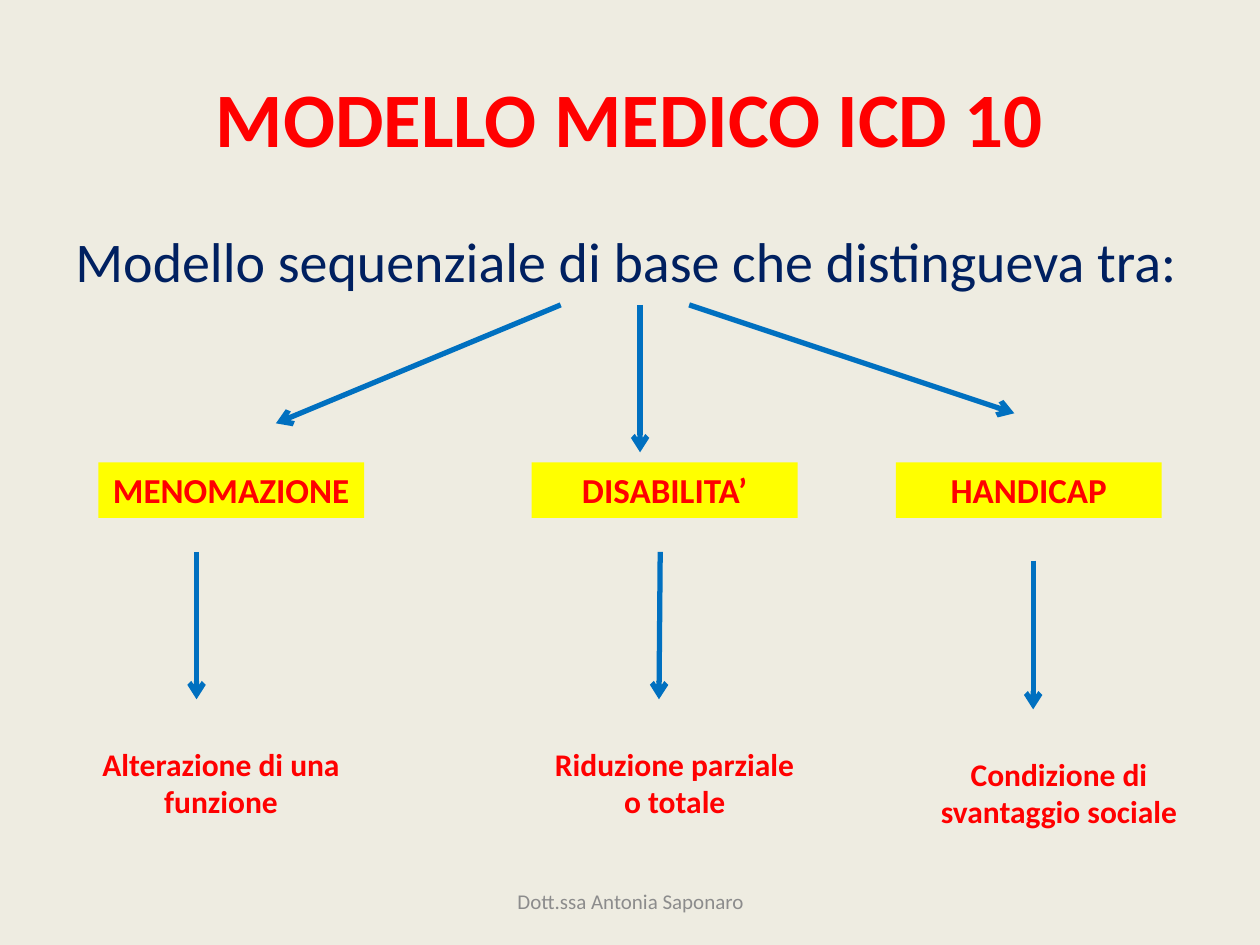
from dataclasses import dataclass

from lxml import etree
from pptx import Presentation
from pptx.dml.color import RGBColor
from pptx.enum import shapes, text
from pptx.oxml import ns
from pptx.util import Inches, Pt


@dataclass(frozen=True)
class Theme:
    font: str = "Calibri"
    background: str = "EEECE1"
    accent: str = "FF0000"
    intro: str = "002060"
    label_fill: str = "FFFF00"
    arrow: str = "0070C0"
    footer: str = "8C8C8C"
    title_size: int = 44
    intro_size: int = 32
    label_size: int = 20
    meaning_size: int = 18
    footer_size: int = 12
    arrow_width: int = 3


THEME = Theme()

TITLE = "MODELLO MEDICO ICD 10"
INTRO = "Modello sequenziale di base che distingueva tra:"
FOOTER = "Dott.ssa Antonia Saponaro"

CONCEPTS = [
    {"label": "MENOMAZIONE", "label_left": 0.78,
     "meaning": "Alterazione di una funzione", "meaning_at": (0.62, 5.86),
     "branch": ((4.45, 2.42), (2.19, 3.36)),
     "descent": ((1.56, 4.38), (1.56, 5.55))},
    {"label": "DISABILITA’", "label_left": 4.22,
     "meaning": "Riduzione parziale o totale", "meaning_at": (4.22, 5.86),
     "branch": ((5.08, 2.42), (5.08, 3.59)),
     "descent": ((5.24, 4.38), (5.23, 5.55))},
    {"label": "HANDICAP", "label_left": 7.11,
     "meaning": "Condizione di svantaggio sociale", "meaning_at": (7.27, 5.94),
     "branch": ((5.47, 2.42), (8.05, 3.28)),
     "descent": ((8.2, 4.45), (8.2, 5.63))},
]

LABEL_TOP, LABEL_SIZE = 3.67, (2.11, 0.44)
MEANING_SIZE = (2.27, 0.71)


def rgb(color):
    return RGBColor.from_string(color)


def write(shape, wording, size, color, bold=False, centered=True,
          middle=False, grow=False):
    frame = shape.text_frame
    frame.text = wording
    frame.word_wrap = True
    frame.auto_size = (text.MSO_AUTO_SIZE.SHAPE_TO_FIT_TEXT if grow
                       else text.MSO_AUTO_SIZE.NONE)
    frame.vertical_anchor = text.MSO_ANCHOR.MIDDLE if middle else text.MSO_ANCHOR.TOP
    paragraph = frame.paragraphs[0]
    paragraph.alignment = text.PP_ALIGN.CENTER if centered else text.PP_ALIGN.LEFT
    paragraph.font.name = THEME.font
    paragraph.font.size = Pt(size)
    paragraph.font.bold = bold
    paragraph.font.color.rgb = rgb(color)


def add_text(slide, box, wording, size, color, **style):
    write(slide.shapes.add_textbox(*map(Inches, box)), wording, size, color, **style)


def add_label(slide, box, wording):
    label = slide.shapes.add_shape(shapes.MSO_SHAPE.RECTANGLE, *map(Inches, box))
    label.shadow.inherit = False
    label.fill.solid()
    label.fill.fore_color.rgb = rgb(THEME.label_fill)
    label.line.fill.background()
    write(label, wording, THEME.label_size, THEME.accent, bold=True, grow=True)


def add_arrow(slide, start, end):
    arrow = slide.shapes.add_connector(
        shapes.MSO_CONNECTOR.STRAIGHT, *map(Inches, start + end))
    arrow.line.color.rgb = rgb(THEME.arrow)
    arrow.line.width = Pt(THEME.arrow_width)
    etree.SubElement(arrow.line._get_or_add_ln(), ns.qn("a:tailEnd"), type="arrow")
    etree.SubElement(arrow._element.spPr, ns.qn("a:effectLst"))


def main():
    deck = Presentation()
    deck.slide_width, deck.slide_height = Inches(10), Inches(7.5)
    slide = deck.slides.add_slide(deck.slide_layouts[6])
    slide.background.fill.solid()
    slide.background.fill.fore_color.rgb = rgb(THEME.background)

    add_text(slide, (0.5, 0.3, 9, 1.25), TITLE, THEME.title_size, THEME.accent,
             bold=True, middle=True)
    add_text(slide, (0.5, 1.75, 9, 0.75), INTRO, THEME.intro_size, THEME.intro,
             centered=False)
    add_text(slide, (3.42, 6.95, 3.17, 0.4), FOOTER, THEME.footer_size, THEME.footer,
             middle=True)

    for concept in CONCEPTS:
        add_label(slide, (concept["label_left"], LABEL_TOP, *LABEL_SIZE),
                  concept["label"])
        add_text(slide, (*concept["meaning_at"], *MEANING_SIZE), concept["meaning"],
                 THEME.meaning_size, THEME.accent, bold=True, grow=True)
        for leg in ("branch", "descent"):
            add_arrow(slide, *concept[leg])

    deck.save("out.pptx")


if __name__ == "__main__":
    main()
